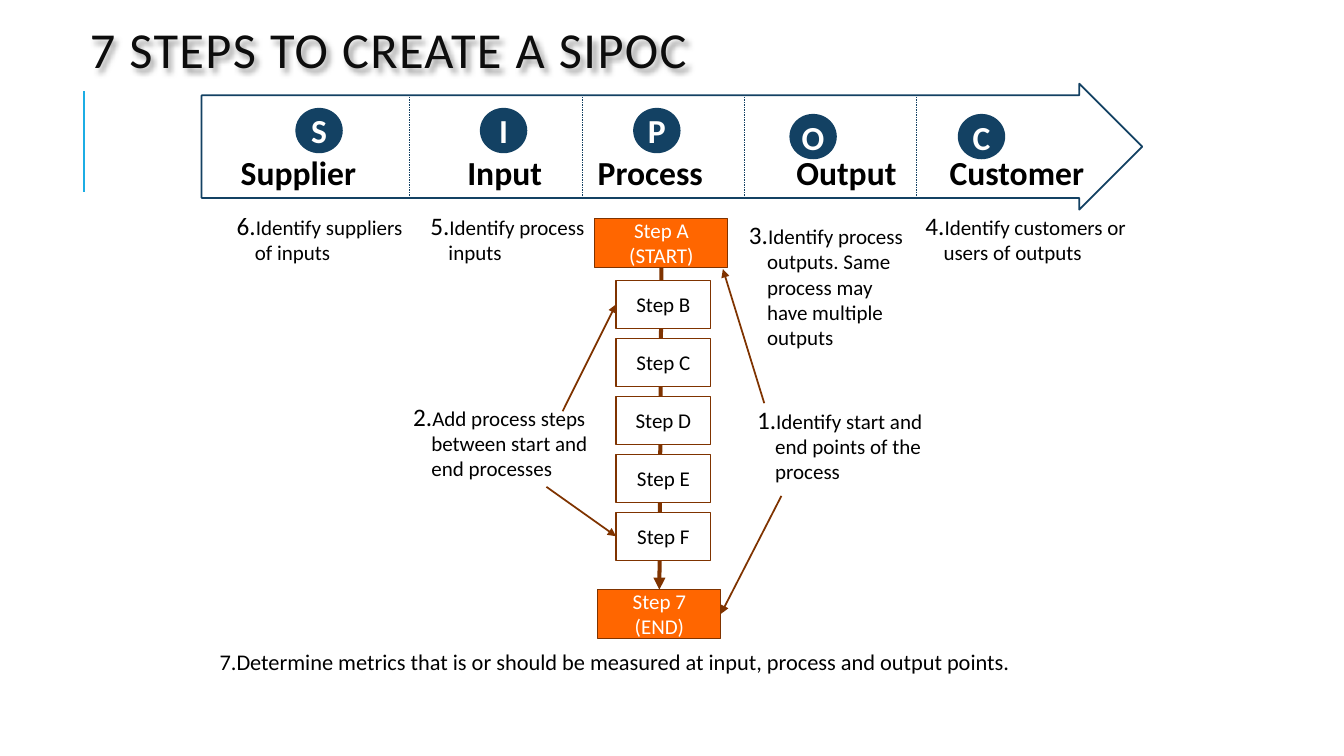
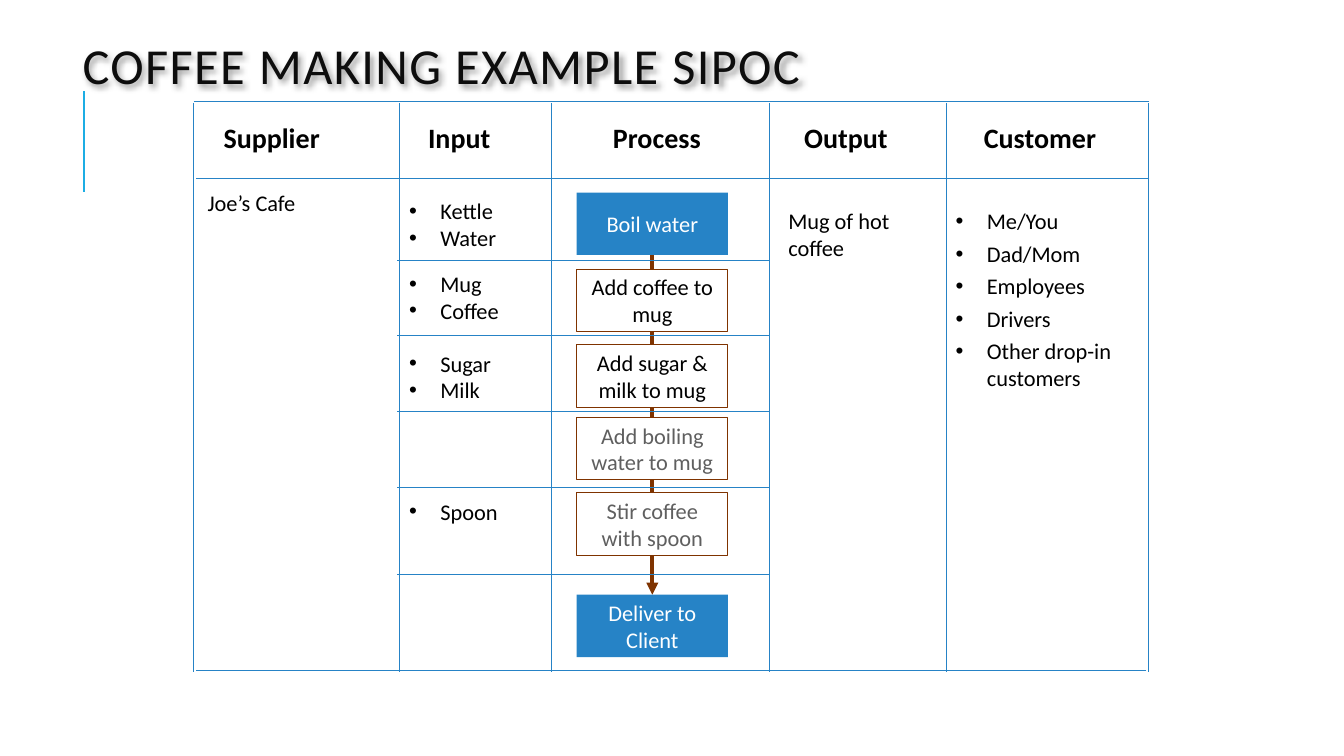
from lxml import etree
from pptx import Presentation
from pptx.dml.color import RGBColor
from pptx.enum.dml import MSO_LINE
from pptx.enum.shapes import MSO_CONNECTOR, MSO_SHAPE
from pptx.enum.text import MSO_ANCHOR, MSO_AUTO_SIZE, PP_ALIGN
from pptx.oxml.ns import qn
from pptx.util import Inches, Pt

RECT, OVAL, ARROW = MSO_SHAPE.RECTANGLE, MSO_SHAPE.OVAL, MSO_SHAPE.RIGHT_ARROW
STRAIGHT = MSO_CONNECTOR.STRAIGHT
DASH = MSO_LINE.DASH
LEFT, CENTER = PP_ALIGN.LEFT, PP_ALIGN.CENTER
MIDDLE = MSO_ANCHOR.MIDDLE
GROW, FIXED = MSO_AUTO_SIZE.SHAPE_TO_FIT_TEXT, MSO_AUTO_SIZE.NONE

FONT = "Calibri"
BLACK, WHITE, GRAY, INK = "000000", "FFFFFF", "5F5F5F", "0D0D0D"
BROWN, ORANGE, NAVY, BLUE, CYAN = "7F3300", "FF6600", "134163", "2683C6", "1CADE4"


# Basics
def color(code):
    return RGBColor.from_string(code)


def add_node(parent, tag, **attrs):
    node = etree.SubElement(parent, qn(tag))
    for key, value in attrs.items():
        node.set(key, str(value))
    return node


def style(para, size, ink=BLACK, bold=False, align=LEFT):
    para.alignment = align
    font = para.font
    font.name, font.size, font.bold = FONT, Pt(size), bold
    font.color.rgb = color(ink)


def indent(para, depth):
    props = para._p.get_or_add_pPr()
    props.set("marL", str(Inches(depth)))
    props.set("indent", str(-Inches(depth)))
    return props


# Lines and shapes
def add_line(slide, start, end, ink, width, head=False, dash=None):
    line = slide.shapes.add_connector(STRAIGHT, *map(Inches, start + end))
    line.line.color.rgb = color(ink)
    line.line.width = Pt(width)
    if dash:
        line.line.dash_style = dash
    if head:
        add_node(line.line._get_or_add_ln(), "a:tailEnd", type="triangle")
    add_node(line._element.spPr, "a:effectLst")
    return line


def add_shape(slide, kind, box, fill=None, edge=None, width=0.75):
    shape = slide.shapes.add_shape(kind, *map(Inches, box))
    shape.shadow.inherit = False
    if fill:
        shape.fill.solid()
        shape.fill.fore_color.rgb = color(fill)
    else:
        shape.fill.background()
    if edge:
        shape.line.color.rgb = color(edge)
        shape.line.width = Pt(width)
    else:
        shape.line.fill.background()
    return shape


def add_step(slide, box, text, size, fill=WHITE, edge=BROWN, ink=BLACK):
    frame = add_shape(slide, RECT, box, fill, edge).text_frame
    frame.word_wrap = True
    frame.vertical_anchor = MIDDLE
    frame.text = text
    style(frame.paragraphs[0], size, ink, align=CENTER)


def add_badge(slide, left, top, letter):
    frame = add_shape(slide, OVAL, (left, top, 0.47, 0.45), NAVY).text_frame
    frame.word_wrap = False
    frame.vertical_anchor = MIDDLE
    frame.text = letter
    style(frame.paragraphs[0], 24, WHITE, True, CENTER)


# Text boxes
def add_text(slide, box, text, wrap=True):
    frame = slide.shapes.add_textbox(*map(Inches, box)).text_frame
    frame.word_wrap = wrap
    frame.auto_size = GROW
    frame.text = text
    return frame.paragraphs


def add_head(slide, box, text, size):
    style(add_text(slide, box, text, False)[0], size, bold=True, align=CENTER)


def add_note(slide, box, number, text, size=15, depth=0.18, scale=120):
    para = add_text(slide, box, text)[0]
    props = indent(para, depth)
    add_node(props, "a:buSzPct", val=scale * 1000)
    add_node(props, "a:buFont", typeface=FONT)
    add_node(props, "a:buAutoNum", type="arabicPeriod", startAt=number)
    style(para, size)


def add_list(slide, box, items, gap=0):
    for para in add_text(slide, box, "\n".join(items)):
        props = indent(para, 0.31)
        add_node(props, "a:buFont", typeface="Arial")
        add_node(props, "a:buChar", char="•")
        para.space_before = Pt(gap)
        style(para, 16)


# Shared slide frame
def add_slide(deck, text, left, top):
    slide = deck.slides.add_slide(deck.slide_layouts[5])
    title = slide.shapes.title
    title.left, title.top = Inches(left), Inches(top)
    title.width, title.height = Inches(10.63), Inches(1.64)
    frame = title.text_frame
    frame.text = text
    frame.word_wrap = True
    frame.auto_size = FIXED
    frame.vertical_anchor = MIDDLE
    para = frame.paragraphs[0]
    para.line_spacing = 0.8
    style(para, 36, INK)
    para.runs[0]._r.get_or_add_rPr().set("spc", "100")
    effects = add_node(title._element.spPr, "a:effectLst")
    shadow = add_node(effects, "a:outerShdw", blurRad=Pt(4), dist=Pt(3),
                      dir=2700000, algn="tl", rotWithShape=0)
    add_node(add_node(shadow, "a:srgbClr", val=BLACK), "a:alpha", val=40000)
    add_line(slide, (0.83, 1.9), (0.83, 0.9), CYAN, 1.5)
    return slide


def build_guide(deck):
    slide = add_slide(deck, "7 STEPS TO CREATE A SIPOC", 0.79, -0.28)

    # Process steps
    add_line(slide, (6.56, 2.65), (6.54, 5.85), BROWN, 2.85, True)
    add_step(slide, (5.9, 2.17, 1.32, 0.48), "Step A (START)", 15, ORANGE, ink=WHITE)
    add_step(slide, (5.93, 5.85, 1.22, 0.48), "Step 7 (END)", 15, ORANGE, ink=WHITE)
    for row, letter in enumerate("BCDEF"):
        top = 2.78 + row * 0.575
        add_step(slide, (6.11, top, 0.94, 0.48), f"Step {letter}", 15)

    # Numbered notes and their pointers
    notes = [
        (7.41, 4, 2.09, 0.86, "Identify start and end points of the process"),
        (4, 3.97, 1.99, 0.86, "Add process steps between start and end processes"),
        (7.33, 2.17, 1.83, 1.36,
         "Identify process outputs. Same process may have multiple outputs"),
        (9.08, 2.08, 2.25, 0.61, "Identify customers or users of outputs"),
        (4.17, 2.08, 1.83, 0.61, "Identify process inputs"),
        (2.25, 2.08, 2, 0.61, "Identify suppliers of inputs"),
    ]
    for number, (*box, text) in enumerate(notes, 1):
        add_note(slide, box, number, text)
    add_note(slide, (2.08, 6.38, 9.33, 0.37), 7,
             "Determine metrics that is or should be measured at input, "
             "process and output points.", 16, 0.11, 100)
    for start, end in [((7.58, 4), (7.17, 2.67)), ((7.75, 4.92), (7.15, 6.09)),
                       ((5.58, 4.08), (6.11, 3.02)), ((5.42, 4.83), (6.11, 5.32))]:
        add_line(slide, start, end, BROWN, 1.25, True)

    # Banner arrow
    arrow = add_shape(slide, ARROW, (2, 0.83, 9.33, 1.25), edge=NAVY, width=1.25)
    arrow.adjustments[0], arrow.adjustments[1] = 0.815, 0.5
    for left in (4.06, 5.77, 7.38, 9.09):
        add_line(slide, (left, 0.96), (left, 1.96), NAVY, 0.25, dash=DASH)
    for text, left, width, spot, top in [
            ("Supplier", 2.28, 1.36, 2.93, 1.07), ("Input", 4.53, 0.95, 4.76, 1.07),
            ("Process", 5.82, 1.26, 6.28, 1.07), ("Output", 7.79, 1.21, 7.83, 1.13),
            ("Customer", 9.31, 1.55, 9.5, 1.13)]:
        add_badge(slide, spot, top, text[0])
        add_head(slide, (left, 1.46, width, 0.5), text, 24)


def build_sample(deck):
    slide = add_slide(deck, "COFFEE MAKING EXAMPLE SIPOC", 0.72, -0.13)

    # Column heads
    for text, left, width in [("Supplier", 2.11, 1.17), ("Input", 4.14, 0.83),
                              ("Process", 5.97, 1.09), ("Output", 7.87, 1.04),
                              ("Customer", 9.65, 1.33)]:
        add_head(slide, (left, 1.15, width, 0.44), text, 20)

    # Process steps
    add_line(slide, (6.47, 2.53), (6.47, 5.9), BROWN, 2.85, True)
    ends, plain, pale = (BLUE, None, WHITE), (WHITE, BROWN, BLACK), (WHITE, BROWN, GRAY)
    for top, text, look in [
            (1.91, "Boil water", ends), (2.67, "Add coffee to mug", plain),
            (3.42, "Add sugar & milk to mug", plain),
            (4.14, "Add boiling water to mug", pale),
            (4.89, "Stir coffee with spoon", pale), (5.9, "Deliver to Client", ends)]:
        add_step(slide, (5.72, top, 1.5, 0.62), text, 16, *look)

    # Cell texts
    for top, items in [(1.91, ["Kettle", "Water"]), (2.63, ["Mug", "Coffee"]),
                       (3.42, ["Sugar", "Milk"]), (4.89, ["Spoon"])]:
        add_list(slide, (3.96, top, 1.36, 0.1 + 0.27 * len(items)), items)
    add_list(slide, (9.38, 2.01, 1.97, 1.99),
             ["Me/You", "Dad/Mom", "Employees", "Drivers", "Other drop-in customers"], 4)
    for box, text in [((1.96, 1.83, 1.95, 0.37), "Joe’s Cafe"),
                      ((7.72, 2.01, 1.58, 0.64), "Mug of hot coffee")]:
        style(add_text(slide, box, text)[0], 16)

    # Grid
    rows = [(top, 3.94, 7.63) for top in (2.58, 3.33, 4.08, 4.83, 5.7)]
    rows += [(1, 1.92, 11.4), (1.77, 1.94, 11.4), (6.65, 1.94, 11.37)]
    for top, left, right in rows:
        add_line(slide, (right, top), (left, top), BLUE, 0.25)
    for left in (1.92, 3.96, 5.47, 7.63, 9.38, 11.39):
        add_line(slide, (left, 1.02), (left, 6.67), BLUE, 0.25)


def main():
    deck = Presentation()
    deck.slide_width, deck.slide_height = Inches(13.33), Inches(7.5)
    build_guide(deck)
    build_sample(deck)
    deck.save("out.pptx")


if __name__ == "__main__":
    main()
